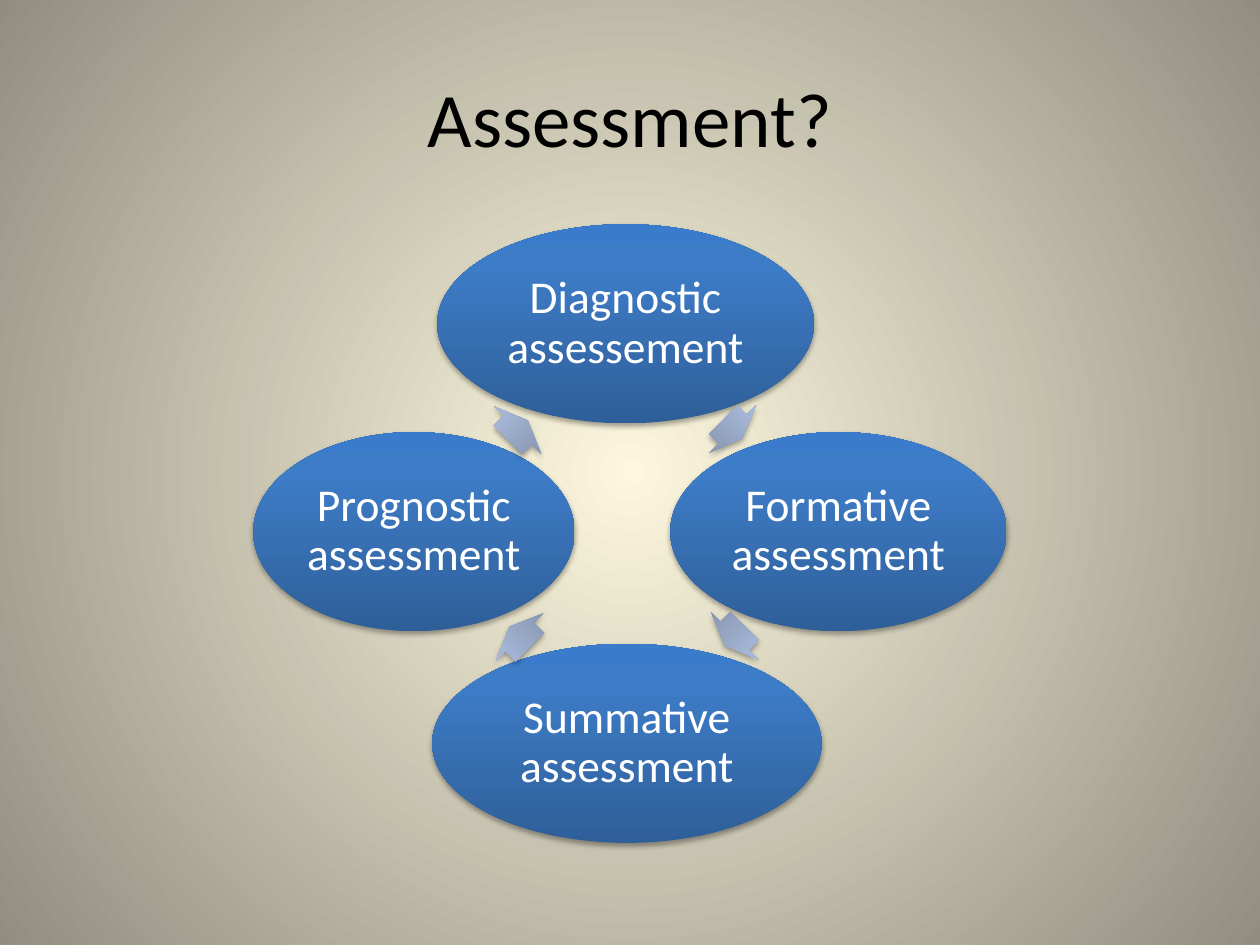
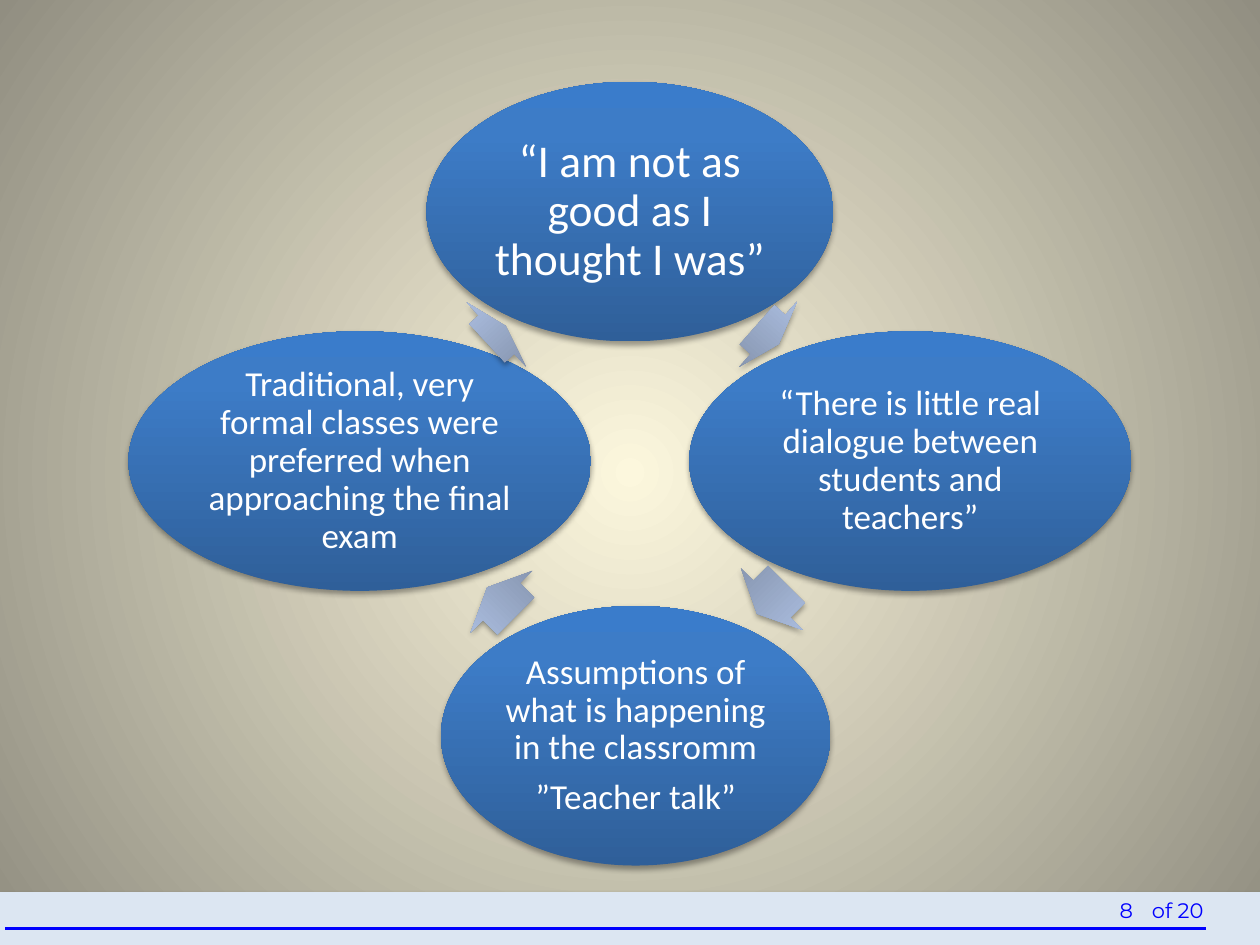
from lxml import etree
from pptx import Presentation
from pptx import util as u
from pptx.dml.color import RGBColor
from pptx.enum import shapes, text
from pptx.oxml import ns

COLOURS = {
    "glow": "FCF7DD", "edge": "918E81",
    "deep blue": "2F5F99", "blue": "3D7CC7", "bright blue": "3A7CCB",
    "deep grey": "818FA8", "grey": "A7B9DA", "bright grey": "A7BADC",
    "band": "DCE6F2", "footer": "0000FF",
    "title": "000000", "white": "FFFFFF", "shadow": "000000",
}
BACKDROP = [(0, "glow"), (100, "edge")]
OVAL = [(0, "deep blue"), (80, "blue"), (100, "bright blue")]
ARROW = [(0, "deep grey"), (80, "grey"), (100, "bright grey")]
BAND = [(0, "band")]
BODY_FONT, FOOTER_FONT = "Calibri", "Montserrat"

deck = Presentation()
deck.slide_width, deck.slide_height = u.Inches(10), u.Inches(7.5)
# Grid of 100 columns and 75 rows: every cell is a square
CELL = deck.slide_width // 100


def set_gradient(fill, owner, stops, radial=False):
    """Fill with colour stops, either rising from the bottom or radial."""
    fill.gradient()
    gradient = owner.find(".//" + ns.qn("a:gradFill"))
    for child in list(gradient):
        gradient.remove(child)
    stop_list = etree.SubElement(gradient, ns.qn("a:gsLst"))
    for share, name in stops:
        stop = etree.SubElement(stop_list, ns.qn("a:gs"), pos=str(share * 1000))
        etree.SubElement(stop, ns.qn("a:srgbClr"), val=COLOURS[name])
    if radial:
        circle = etree.SubElement(gradient, ns.qn("a:path"), path="circle")
        etree.SubElement(circle, ns.qn("a:fillToRect"),
                         l="50000", t="50000", r="50000", b="50000")
    else:
        etree.SubElement(gradient, ns.qn("a:lin"), ang="16200000", scaled="0")


def add_shaded(page, kind, centre, middle, width, height, stops):
    """Add an unlined shape with a soft shadow, placed by its centre."""
    box = page.shapes.add_shape(
        kind, *[int(cells * CELL) for cells in
                (centre - width / 2, middle - height / 2, width, height)])
    if len(stops) > 1:
        set_gradient(box.fill, box.element.spPr, stops)
    else:
        box.fill.solid()
        box.fill.fore_color.rgb = RGBColor.from_string(COLOURS[stops[0][1]])
    box.line.fill.background()
    box.shadow.inherit = False
    effects = box.element.spPr.find(ns.qn("a:effectLst"))
    shadow = etree.SubElement(effects, ns.qn("a:outerShdw"), blurRad="40000",
                              dist="23000", dir="5400000", rotWithShape="0")
    tint = etree.SubElement(shadow, ns.qn("a:srgbClr"), val=COLOURS["shadow"])
    etree.SubElement(tint, ns.qn("a:alpha"), val="35000")
    return box


# Labels: wording, left, top, width, height, size, font, colour, alignment
CENTER, RIGHT = text.PP_ALIGN.CENTER, text.PP_ALIGN.RIGHT
TITLE = ("Assessment?", 5, 3, 90, 12.5, 44, BODY_FONT, "title", CENTER)
FOOTER = [
    ("of 20", 87.8, 70, 8.7, 4.5, 12, FOOTER_FONT, "footer", RIGHT),
    ("8", 86.2, 70, 4.7, 4.5, 12, FOOTER_FONT, "footer", RIGHT),
]

# Cycles run clockwise from the top.
# Ovals: centre, middle, width, text size, paragraphs
# Arrows: centre, middle, width, rotation
PAGES = [
    {
        "labels": [TITLE], "footer": False,
        "oval height": 15.8, "arrow height": 5.3,
        "ovals": [
            (49.65, 25.7, 29.9, 26, ["Diagnostic assessement"]),
            (66.55, 42.2, 26.7, 26, ["Formative assessment"]),
            (49.75, 59, 30.9, 26, ["Summative assessment"]),
            (32.85, 42.2, 25.5, 26, ["Prognostic assessment"]),
        ],
        "arrows": [(58.15, 34.05, 2.1, 44.5), (58.3, 50.45, 2.2, 135),
                   (41.25, 50.55, 2.3, 225), (41.1, 34.15, 2.2, 315.5)],
    },
    {
        "labels": FOOTER, "footer": True,
        "oval height": 20.6, "arrow height": 6.9,
        "ovals": [
            (50, 16.8, 32.3, 26, ["“I am not as good as I thought I was”"]),
            (72.25, 36.6, 35.1, 20,
             ["“There is little real dialogue between students and teachers”"]),
            (50.45, 58.4, 30.9, 20,
             ["Assumptions of what is happening in the classromm",
              "”Teacher talk”"]),
            (28.55, 36.6, 36.7, 20,
             ["Traditional, very formal classes were preferred when "
              "approaching the final exam"]),
        ],
        "arrows": [(60.95, 26.55, 2.3, 41.6), (61.25, 47.55, 3.3, 135),
                   (39.8, 47.75, 3.2, 225), (39.4, 26.55, 2, 317.3)],
    },
]

for plan in PAGES:
    page = deck.slides.add_slide(deck.slide_layouts[6])
    set_gradient(page.background.fill, page.element, BACKDROP, radial=True)

    # Footer band and rule
    if plan["footer"]:
        add_shaded(page, shapes.MSO_SHAPE.RECTANGLE, 50, 72.9, 100, 4.2, BAND)
        rule = page.shapes.add_connector(
            shapes.MSO_CONNECTOR.STRAIGHT,
            *[int(cells * CELL) for cells in (0.4, 73.7, 95.7, 73.7)])
        rule.line.color.rgb = RGBColor.from_string(COLOURS["footer"])
        rule.line.width = u.Pt(1.75)
        etree.SubElement(rule.element.spPr, ns.qn("a:effectLst"))

    # Title or footer text
    for wording, *place, size, font, colour, align in plan["labels"]:
        box = page.shapes.add_textbox(*[int(cells * CELL) for cells in place])
        box.text_frame.word_wrap = True
        box.text_frame.vertical_anchor = text.MSO_ANCHOR.MIDDLE
        para = box.text_frame.paragraphs[0]
        para.text = wording
        para.alignment = align
        para.font.size, para.font.name = u.Pt(size), font
        para.font.color.rgb = RGBColor.from_string(COLOURS[colour])

    # Cycle of ovals, each followed by its arrow
    for oval, arrow in zip(plan["ovals"], plan["arrows"]):
        centre, middle, width, size, wording = oval
        box = add_shaded(page, shapes.MSO_SHAPE.OVAL, centre, middle, width,
                         plan["oval height"], OVAL)
        frame = box.text_frame
        frame.word_wrap = True
        frame.vertical_anchor = text.MSO_ANCHOR.MIDDLE
        frame.margin_left = frame.margin_right = u.Inches(size / 600)
        frame.margin_top = frame.margin_bottom = u.Inches(size / 600)
        frame.text = "\n".join(wording)
        for para in frame.paragraphs:
            para.alignment = CENTER
            para.line_spacing = 0.9
            para.space_after = u.Pt(round(size * 0.35))
            para.font.size, para.font.name = u.Pt(size), BODY_FONT
            para.font.color.rgb = RGBColor.from_string(COLOURS["white"])

        centre, middle, width, rotation = arrow
        pointer = add_shaded(page, shapes.MSO_SHAPE.RIGHT_ARROW, centre, middle,
                             width, plan["arrow height"], ARROW)
        pointer.adjustments[0], pointer.adjustments[1] = 0.6, 0.5
        pointer.rotation = rotation

deck.save("out.pptx")
